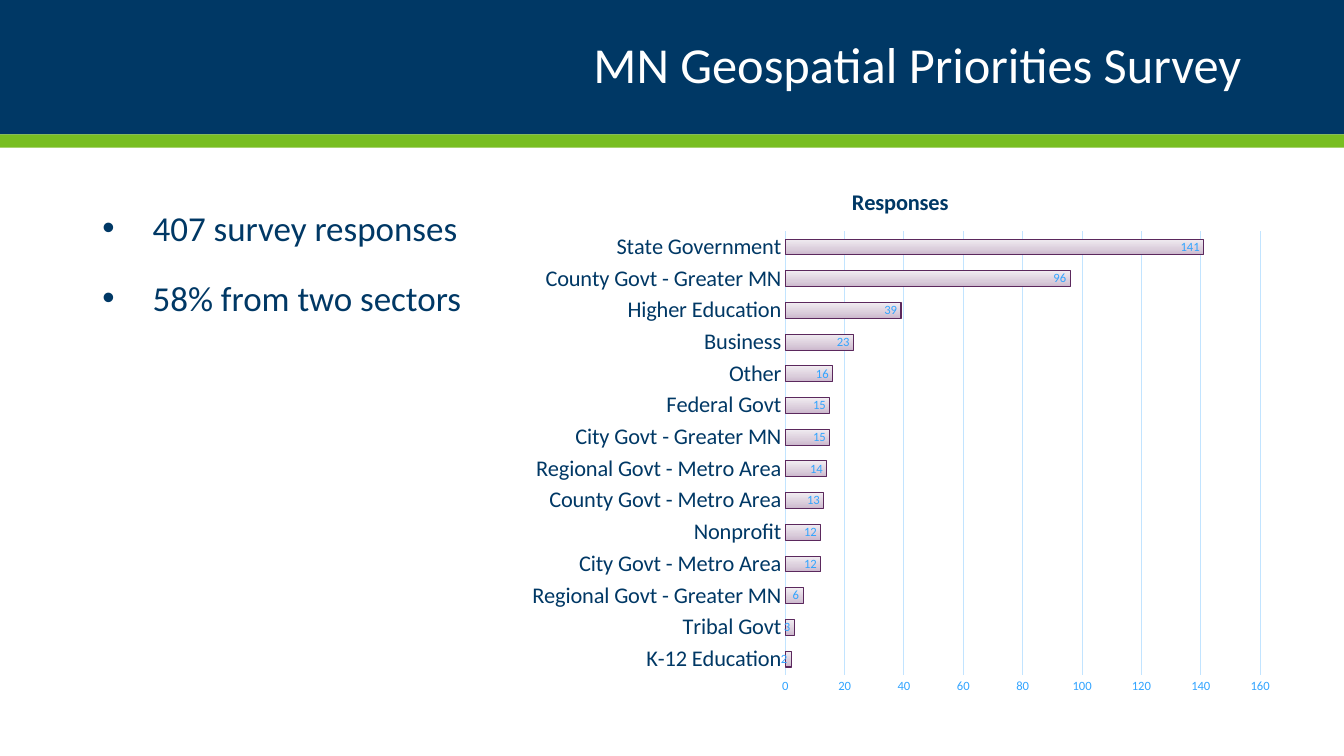
from copy import deepcopy
from dataclasses import dataclass

from lxml import etree
from pptx import Presentation
from pptx.chart.data import CategoryChartData
from pptx.dml.color import RGBColor
from pptx.enum.chart import XL_CHART_TYPE, XL_LABEL_POSITION, XL_TICK_MARK
from pptx.enum.shapes import MSO_SHAPE
from pptx.enum.text import MSO_ANCHOR, PP_ALIGN
from pptx.oxml import parse_xml
from pptx.oxml.ns import nsdecls, qn
from pptx.util import Pt

BAR_CLUSTERED = XL_CHART_TYPE.BAR_CLUSTERED
INSIDE_END = XL_LABEL_POSITION.INSIDE_END
NO_TICK = XL_TICK_MARK.NONE
RECTANGLE = MSO_SHAPE.RECTANGLE
MIDDLE = MSO_ANCHOR.MIDDLE
RIGHT = PP_ALIGN.RIGHT

FONT = "Calibri"
COLORS = {
    "navy": "003865",
    "green": "78BE21",
    "white": "FFFFFF",
    "grid": "C2E4FF",
    "value": "32A4FF",
    "bar_line": "5B285D",
}
BAR_GRADIENT = [(0, "CBB7CC"), (0.35, "DACDDB"), (1, "F1ECF1")]
PLOT_LAYOUT = {"x": 0.35, "y": 0.12, "w": 0.62, "h": 0.82}
BULLETS = ["407 survey responses", "58% from two sectors"]
RESPONSES = {
    "K-12 Education": 2,
    "Tribal Govt": 3,
    "Regional Govt - Greater MN": 6,
    "City Govt - Metro Area": 12,
    "Nonprofit": 12,
    "County Govt - Metro Area": 13,
    "Regional Govt - Metro Area": 14,
    "City Govt - Greater MN": 15,
    "Federal Govt": 15,
    "Other": 16,
    "Business": 23,
    "Higher Education": 39,
    "County Govt - Greater MN": 96,
    "State Government": 141,
}


@dataclass
class Band:
    top: float
    height: float
    color: str


BANDS = [Band(0, 96, "navy"), Band(96, 9.4, "green")]


def rgb(name: str) -> RGBColor:
    return RGBColor.from_string(COLORS[name])


def style_font(font, size: float, color: str, bold: bool = False) -> None:
    font.name = FONT
    font.size = Pt(size)
    font.bold = bold
    font.color.rgb = rgb(color)


def style_line(line, color: str) -> None:
    line.color.rgb = rgb(color)
    line.width = Pt(0.75)


def add_band(slide, band: Band, width: int) -> None:
    shape = slide.shapes.add_shape(RECTANGLE, 0, Pt(band.top), width, Pt(band.height))
    shape.shadow.inherit = False
    shape.fill.solid()
    shape.fill.fore_color.rgb = rgb(band.color)
    shape.line.fill.background()


def add_text_frame(slide, left: float, top: float, width: float, height: float):
    box = slide.shapes.add_textbox(Pt(left), Pt(top), Pt(width), Pt(height))
    box.text_frame.word_wrap = True
    return box.text_frame


def add_title(slide) -> None:
    text_frame = add_text_frame(slide, 66, 12, 828, 72)
    text_frame.vertical_anchor = MIDDLE
    text_frame.text = "MN Geospatial Priorities Survey"
    paragraph = text_frame.paragraphs[0]
    paragraph.alignment = RIGHT
    paragraph.line_spacing = 0.9
    style_font(paragraph.runs[0].font, 36, "white")


def add_bullets(slide) -> None:
    text_frame = add_text_frame(slide, 66, 144, 319, 343)
    text_frame.text = "\n".join(BULLETS)
    for index, paragraph in enumerate(text_frame.paragraphs):
        properties = paragraph._p.get_or_add_pPr()
        properties.set("marL", str(Pt(36)))
        properties.set("indent", str(Pt(-36)))
        bullet_color = etree.SubElement(properties, qn("a:buClr"))
        etree.SubElement(bullet_color, qn("a:srgbClr"), val=COLORS["navy"])
        etree.SubElement(properties, qn("a:buFont"), typeface="Arial")
        etree.SubElement(properties, qn("a:buChar"), char="•")
        paragraph.space_before = Pt(10 if index else 0)
        paragraph.space_after = Pt(10)
        style_font(paragraph.runs[0].font, 25, "navy")


def fill_bars(series) -> None:
    fill = series.format.fill
    fill.gradient()
    fill.gradient_angle = 90
    first_stop = series._element.find(".//" + qn("a:gs"))
    first_stop.addnext(deepcopy(first_stop))
    for stop, (position, color) in zip(fill.gradient_stops, BAR_GRADIENT):
        stop.position = position
        stop.color.rgb = RGBColor.from_string(color)
    style_line(series.format.line, "bar_line")


def set_plot_layout(chart) -> None:
    plot_area = chart._chartSpace.chart.plotArea
    for layout in plot_area.findall(qn("c:layout")):
        plot_area.remove(layout)
    sizes = "".join(f'<c:{key} val="{value}"/>' for key, value in PLOT_LAYOUT.items())
    plot_area.insert(0, parse_xml(
        f'<c:layout {nsdecls("c")}><c:manualLayout><c:layoutTarget val="inner"/>'
        f'<c:xMode val="edge"/><c:yMode val="edge"/>{sizes}'
        "</c:manualLayout></c:layout>"
    ))


def style_axes(chart) -> None:
    for axis, size, color in (
        (chart.category_axis, 16, "navy"),
        (chart.value_axis, 9, "value"),
    ):
        axis.major_tick_mark = NO_TICK
        axis.minor_tick_mark = NO_TICK
        style_font(axis.tick_labels.font, size, color)
    chart.category_axis.has_major_gridlines = False
    style_line(chart.category_axis.format.line, "grid")
    value_axis = chart.value_axis
    value_axis.minimum_scale = 0
    value_axis.maximum_scale = 160
    value_axis.major_unit = 20
    value_axis.format.line.fill.background()
    style_line(value_axis.major_gridlines.format.line, "grid")


def add_response_chart(slide) -> None:
    data = CategoryChartData()
    data.categories = list(RESPONSES)
    data.add_series("Responses", list(RESPONSES.values()))
    chart = slide.shapes.add_chart(
        BAR_CLUSTERED, Pt(369.4), Pt(118.8), Pt(547.2), Pt(386.6), data
    ).chart
    style_font(chart.font, 10, "navy")
    chart.has_legend = False
    chart.has_title = True
    title_frame = chart.chart_title.text_frame
    title_frame.text = "Responses"
    style_font(title_frame.paragraphs[0].runs[0].font, 16, "navy", bold=True)
    style_axes(chart)

    plot = chart.plots[0]
    plot.gap_width = 100
    plot.vary_by_categories = False
    fill_bars(plot.series[0])
    labels = plot.series[0].data_labels
    labels.show_value = True
    labels.position = INSIDE_END
    style_font(labels.font, 9, "value")
    set_plot_layout(chart)


def main() -> None:
    presentation = Presentation()
    presentation.slide_width = Pt(960)
    presentation.slide_height = Pt(540)
    slide = presentation.slides.add_slide(presentation.slide_layouts[6])

    # Header
    for band in BANDS:
        add_band(slide, band, presentation.slide_width)
    add_title(slide)

    # Findings and chart
    add_bullets(slide)
    add_response_chart(slide)

    presentation.save("out.pptx")


if __name__ == "__main__":
    main()
